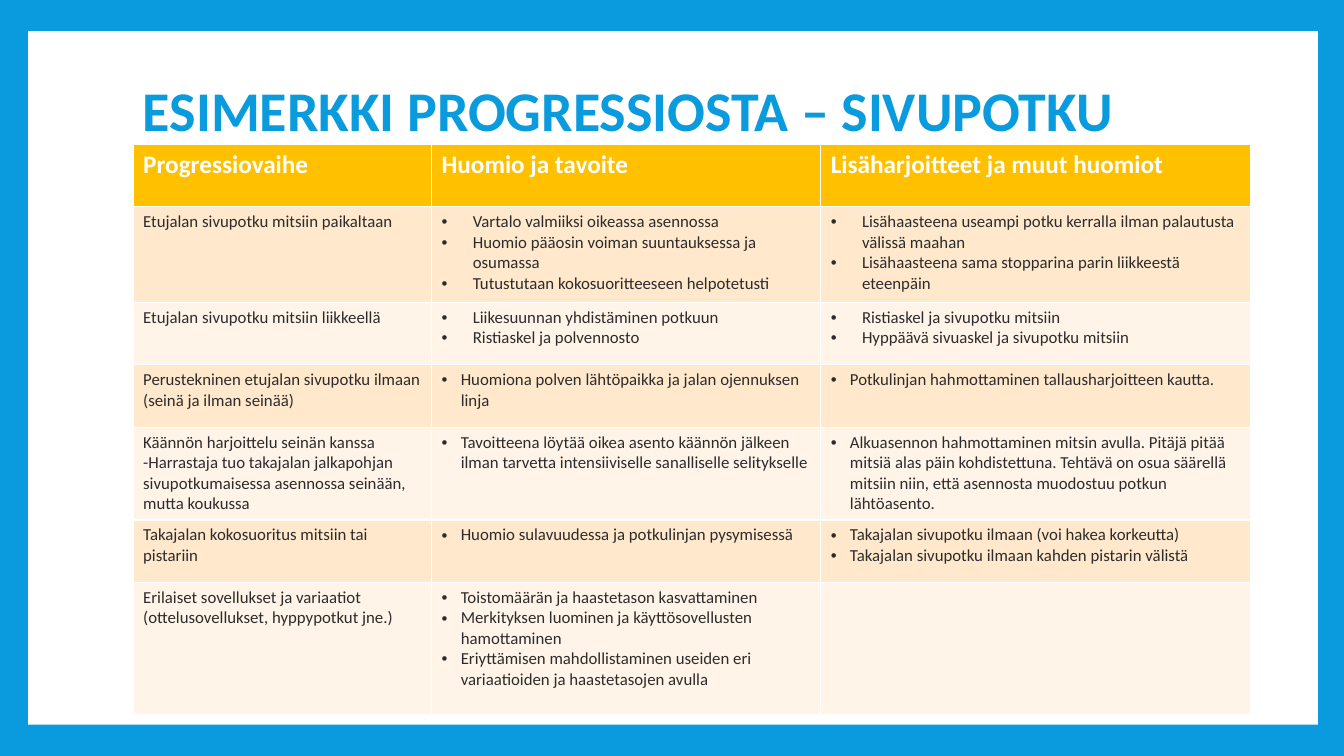
from lxml import etree
from pptx import Presentation
from pptx.dml.color import RGBColor
from pptx.enum import shapes, text
from pptx.oxml import ns
from pptx.util import Inches, Pt

HUES = {"blue": "099BDD", "white": "FFFFFF", "gold": "FFC000",
        "ink": "2C2C2C", "peach": "FFE8CC", "cream": "FFF4E7"}
WIDE, NARROW = 0.31, 0.19
COLS = [2.96, 3.86, 4.26]
HEAD = ["Progressiovaihe", "Huomio ja tavoite", "Lisäharjoitteet ja muut huomiot"]
STEPS = [
    (0.95, WIDE, "Etujalan sivupotku mitsiin paikaltaan",
     ["Vartalo valmiiksi oikeassa asennossa",
      "Huomio pääosin voiman suuntauksessa ja osumassa",
      "Tutustutaan kokosuoritteeseen helpotetusti"],
     ["Lisähaasteena useampi potku kerralla ilman palautusta välissä maahan",
      "Lisähaasteena sama stopparina parin liikkeestä eteenpäin"]),
    (0.62, WIDE, "Etujalan sivupotku mitsiin liikkeellä",
     ["Liikesuunnan yhdistäminen potkuun", "Ristiaskel ja polvennosto"],
     ["Ristiaskel ja sivupotku mitsiin", "Hyppäävä sivuaskel ja sivupotku mitsiin"]),
    (0.62, NARROW, "Perustekninen etujalan sivupotku ilmaan (seinä ja ilman seinää)",
     ["Huomiona polven lähtöpaikka ja jalan ojennuksen linja"],
     ["Potkulinjan hahmottaminen tallausharjoitteen kautta."]),
    (0.92, NARROW, "Käännön harjoittelu seinän kanssa -Harrastaja tuo takajalan "
     "jalkapohjan sivupotkumaisessa asennossa seinään, mutta koukussa",
     ["Tavoitteena löytää oikea asento käännön jälkeen ilman tarvetta "
      "intensiiviselle sanalliselle selitykselle"],
     ["Alkuasennon hahmottaminen mitsin avulla. Pitäjä pitää mitsiä alas päin "
      "kohdistettuna. Tehtävä on osua säärellä mitsiin niin, että asennosta "
      "muodostuu potkun lähtöasento."]),
    (0.62, NARROW, "Takajalan kokosuoritus mitsiin tai pistariin",
     ["Huomio sulavuudessa ja potkulinjan pysymisessä"],
     ["Takajalan sivupotku ilmaan (voi hakea korkeutta)",
      "Takajalan sivupotku ilmaan kahden pistarin välistä"]),
    (1.31, NARROW, "Erilaiset sovellukset ja variaatiot (ottelusovellukset, hyppypotkut jne.)",
     ["Toistomäärän ja haastetason kasvattaminen",
      "Merkityksen luominen ja käyttösovellusten hamottaminen",
      "Eriyttämisen mahdollistaminen useiden eri variaatioiden ja haastetasojen avulla"],
     []),
]


def tint(name):
    """Return the named colour."""
    return RGBColor.from_string(HUES[name])


def style(par, size, hue, bold):
    """Set the font of a paragraph."""
    font = par.font
    font.name, font.size, font.bold = "Calibri", Pt(size), bold
    font.color.rgb = tint(hue)


def bullet(par, gap):
    """Give a paragraph a hanging bullet."""
    props = par._p.get_or_add_pPr()
    props.set("marL", str(Inches(gap)))
    props.set("indent", str(-Inches(gap)))
    face = etree.Element(ns.qn("a:buFont"), typeface="Arial")
    mark = etree.Element(ns.qn("a:buChar"), char="•")
    props.insert(0, face)
    props.insert(1, mark)


def fill(cell, lines, back, size, hue, bold, gap=0):
    """Write lines into a cell, bulleted when a gap is given."""
    cell.fill.solid()
    cell.fill.fore_color.rgb = tint(back)
    frame = cell.text_frame
    for i, line in enumerate(lines or [""]):
        par = frame.add_paragraph() if i else frame.paragraphs[0]
        par.text = line
        style(par, size, hue, bold)
        if gap and line:
            bullet(par, gap)


def panel(slide, box):
    """Draw the white panel on the blue ground."""
    slide.background.fill.solid()
    slide.background.fill.fore_color.rgb = tint("blue")
    card = slide.shapes.add_shape(shapes.MSO_SHAPE.RECTANGLE, *map(Inches, box))
    card.shadow.inherit = False
    card.fill.solid()
    card.fill.fore_color.rgb = tint("white")
    card.line.fill.background()


def title(slide, box, words):
    """Place the heading."""
    frame = slide.shapes.add_textbox(*map(Inches, box)).text_frame
    frame.word_wrap = True
    frame.vertical_anchor = text.MSO_ANCHOR.MIDDLE
    par = frame.paragraphs[0]
    par.text = words
    par.line_spacing = 0.85
    style(par, 40, "blue", True)


def chart(slide, box):
    """Build the table of kick steps."""
    grid = slide.shapes.add_table(len(STEPS) + 1, len(COLS), *map(Inches, box)).table
    for col, width in zip(grid.columns, COLS):
        col.width = Inches(width)
    grid.rows[0].height = Inches(0.62)
    for c, word in enumerate(HEAD):
        fill(grid.cell(0, c), [word], "gold", 18, "white", True)
    for r, (height, gap, step, *lists) in enumerate(STEPS, 1):
        grid.rows[r].height = Inches(height)
        back = "peach" if r % 2 else "cream"
        fill(grid.cell(r, 0), [step], back, 12, "ink", False)
        for c, lines in enumerate(lists, 1):
            fill(grid.cell(r, c), lines, back, 12, "ink", False, gap)


def main():
    """Build and save the slide."""
    deck = Presentation()
    deck.slide_width, deck.slide_height = Inches(13.33), Inches(7.5)
    slide = deck.slides.add_slide(deck.slide_layouts[6])
    panel(slide, (0.28, 0.31, 12.79, 6.88))
    title(slide, (1.32, 0.31, 10.7, 1.65), "ESIMERKKI PROGRESSIOSTA – SIVUPOTKU")
    chart(slide, (1.32, 1.43, sum(COLS), 5.66))
    deck.save("out.pptx")


if __name__ == "__main__":
    main()
